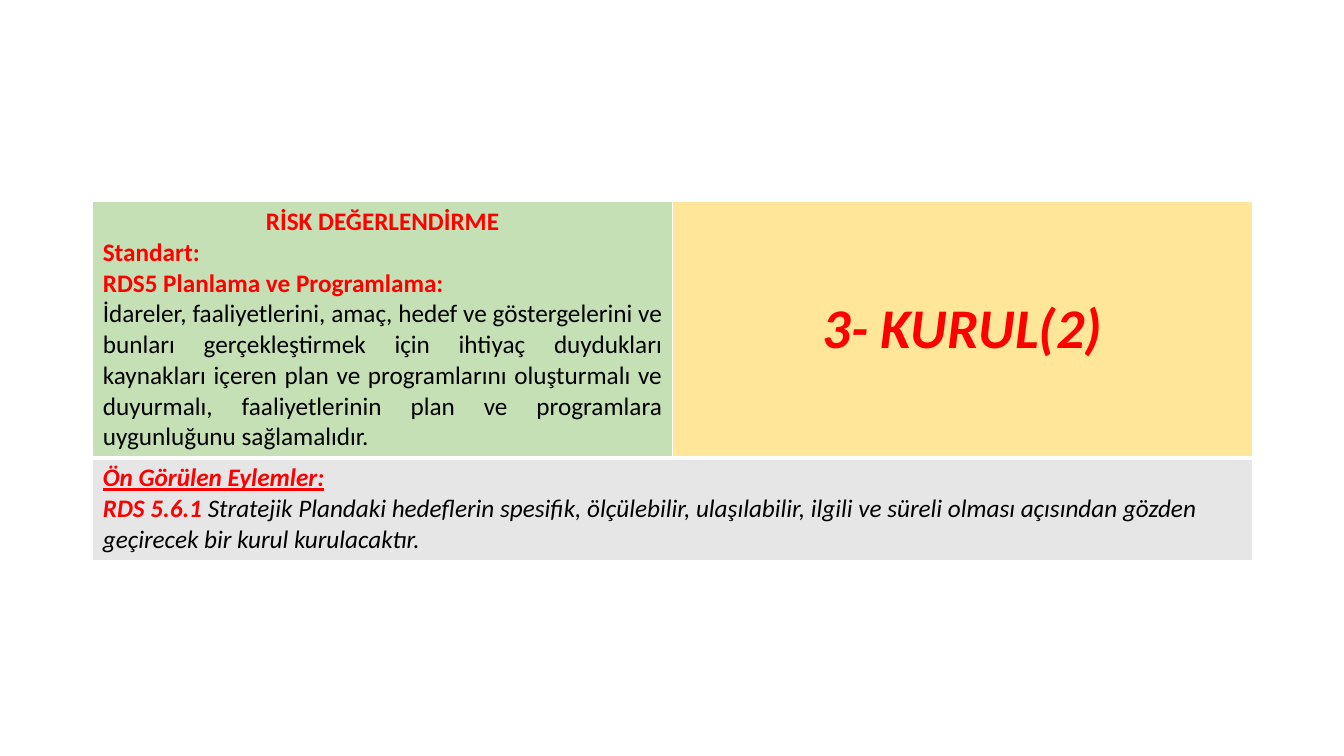
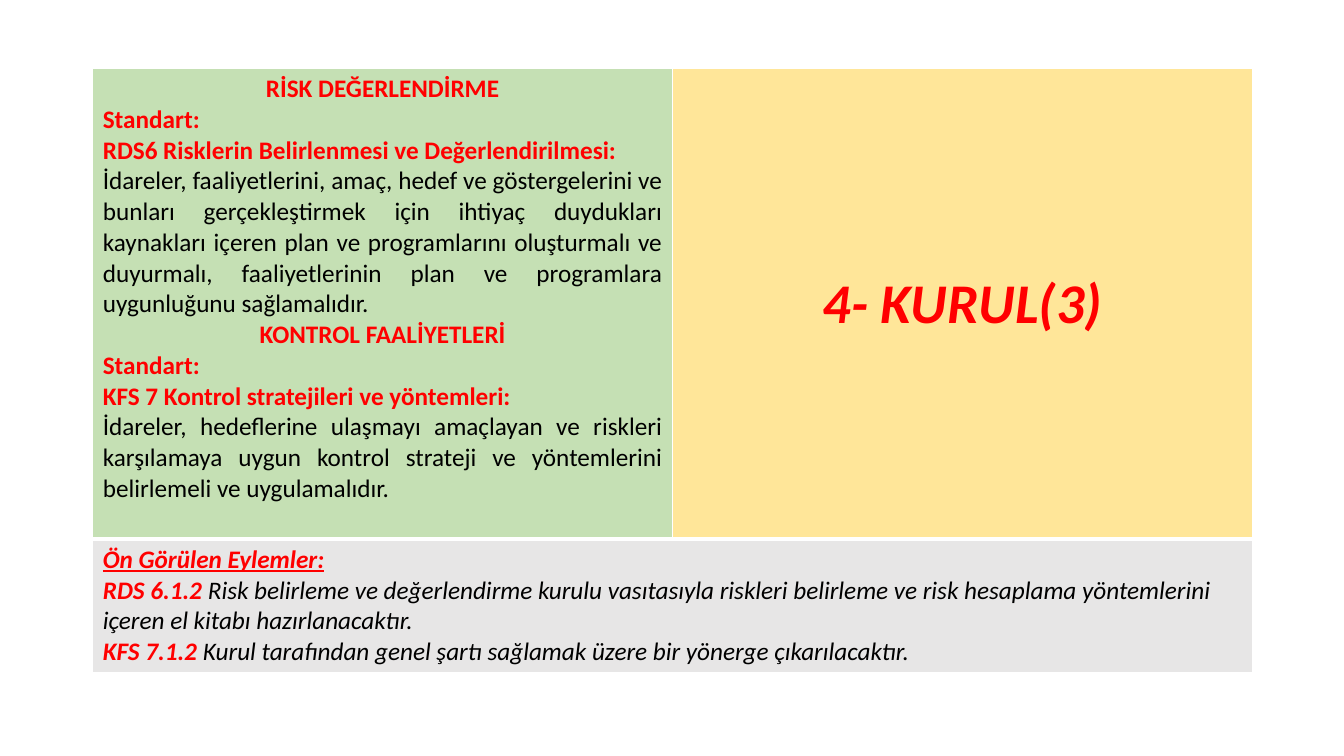
from lxml.etree import SubElement
from pptx import Presentation
from pptx.dml.color import RGBColor
from pptx.enum.text import MSO_ANCHOR, PP_ALIGN
from pptx.oxml.ns import qn
from pptx.util import Inches, Pt

# Shared look
RED, BLACK, WHITE = "FF0000", "000000", "FFFFFF"
GREEN, YELLOW, GREY = "C5E0B4", "FFE699", "E7E6E6"
LEFT, COLUMN = 0.92, 5.75
LEFT_ALIGN, CENTER, JUSTIFY = PP_ALIGN.LEFT, PP_ALIGN.CENTER, PP_ALIGN.JUSTIFY


def write(paragraph, text, color=RED, size=18, bold=True, italic=False,
          underline=False, align=LEFT_ALIGN):
    """Add one formatted run to a paragraph."""
    paragraph.alignment = align
    run = paragraph.add_run()
    run.text = text
    font = run.font
    font.name, font.size = "Calibri", Pt(size)
    font.bold, font.italic, font.underline = bold, italic, underline
    font.color.rgb = RGBColor.from_string(color)


def style_cell(cell, fill, bottom=1):
    """Give a cell white borders and a solid fill."""
    properties = cell._tc.get_or_add_tcPr()
    for side, width in (("L", 1), ("R", 1), ("T", 1), ("B", bottom)):
        border = SubElement(properties, qn(f"a:ln{side}"), w=str(Pt(width)))
        SubElement(SubElement(border, qn("a:solidFill")), qn("a:srgbClr"), val=WHITE)
    cell.fill.solid()
    cell.fill.fore_color.rgb = RGBColor.from_string(fill)


# Content: each standard is (component, name, requirement)
PLANNING = ("İdareler, faaliyetlerini, amaç, hedef ve göstergelerini ve bunları "
            "gerçekleştirmek için ihtiyaç duydukları kaynakları içeren plan ve "
            "programlarını oluşturmalı ve duyurmalı, faaliyetlerinin plan ve "
            "programlara uygunluğunu sağlamalıdır. ")
CONTROL = ("İdareler, hedeflerine ulaşmayı amaçlayan ve riskleri karşılamaya uygun "
           "kontrol strateji ve yöntemlerini belirlemeli ve uygulamalıdır.")
RISK = "RİSK DEĞERLENDİRME"

boards = [
    {"name": "3- KURUL(2)", "top": 2, "rows": (2.54, 1),
     "standards": [(RISK, "RDS5 Planlama ve Programlama:", PLANNING)],
     "actions": [("RDS 5.6.1 ",
                  "Stratejik Plandaki hedeflerin spesifik, ölçülebilir, ulaşılabilir, "
                  "ilgili ve süreli olması açısından gözden geçirecek bir kurul "
                  "kurulacaktır.")]},
    {"name": "4- KURUL(3)", "top": 0.68, "rows": (4.67, 1.3),
     "standards": [
         (RISK, "RDS6 Risklerin Belirlenmesi ve Değerlendirilmesi:", PLANNING),
         ("KONTROL FAALİYETLERİ", "KFS 7 Kontrol stratejileri ve yöntemleri:", CONTROL)],
     "actions": [("RDS 6.1.2 ",
                  "Risk belirleme ve değerlendirme kurulu vasıtasıyla riskleri belirleme "
                  "ve risk hesaplama yöntemlerini içeren el kitabı hazırlanacaktır."),
                 ("KFS 7.1.2 ",
                  "Kurul tarafından genel şartı sağlamak üzere bir yönerge "
                  "çıkarılacaktır.")]},
]

presentation = Presentation()
presentation.slide_width, presentation.slide_height = Inches(13.33), Inches(7.5)

for board in boards:
    slide = presentation.slides.add_slide(presentation.slide_layouts[6])
    grid = slide.shapes.add_table(
        2, 2, Inches(LEFT), Inches(board["top"]),
        Inches(2 * COLUMN), Inches(sum(board["rows"]))).table
    grid.first_row = grid.horz_banding = False
    for row, height in zip(grid.rows, board["rows"]):
        row.height = Inches(height)

    standards, board_name = grid.cell(0, 0), grid.cell(0, 1)
    actions = grid.cell(1, 0)
    actions.merge(grid.cell(1, 1))
    style_cell(standards, GREEN, bottom=3)
    style_cell(board_name, YELLOW, bottom=3)
    style_cell(actions, GREY)
    style_cell(grid.cell(1, 1), GREY)

    # Standards
    frame = standards.text_frame
    for number, (component, standard, requirement) in enumerate(board["standards"]):
        heading = frame.add_paragraph() if number else frame.paragraphs[0]
        write(heading, component, align=CENTER)
        write(frame.add_paragraph(), "Standart:")
        write(frame.add_paragraph(), standard)
        write(frame.add_paragraph(), requirement, color=BLACK, bold=False, align=JUSTIFY)

    # Board name
    board_name.vertical_anchor = MSO_ANCHOR.MIDDLE
    write(board_name.text_frame.paragraphs[0], board["name"],
          size=40, italic=True, align=CENTER)

    # Planned actions
    frame = actions.text_frame
    write(frame.paragraphs[0], "Ön Görülen Eylemler:", italic=True, underline=True)
    for code, action in board["actions"]:
        line = frame.add_paragraph()
        write(line, code, italic=True)
        write(line, action, color=BLACK, bold=False, italic=True)

presentation.save("out.pptx")
